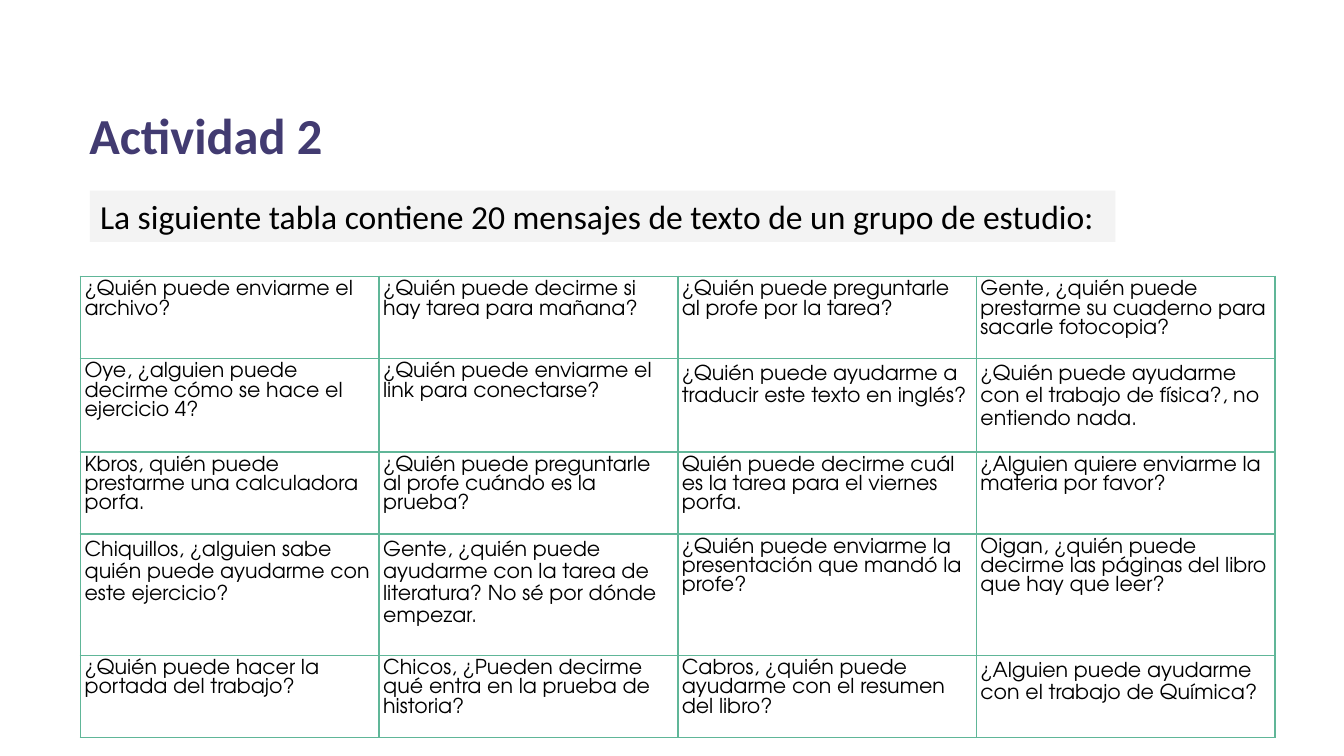
"""Build the slide "Actividad 2" with its table of study-group messages."""
from dataclasses import dataclass

import lxml.etree
import pptx
import pptx.dml.color
import pptx.enum.shapes
import pptx.enum.text
import pptx.oxml.ns
import pptx.util

Pt = pptx.util.Pt
COLORS = {"title": "423B71", "text": "000000", "band": "F3F3F3", "border": "60B698"}
LOOSE = 1.15
COLUMN_WIDTH = 160
ROW_HEIGHTS = [44, 49.8, 44, 64.8, 44]


@dataclass
class Message:
    text: str
    line_spacing: float = 1.0


MESSAGES = [
    [
        Message("¿Quién puede enviarme el archivo?"),
        Message("¿Quién puede decirme si hay tarea para mañana?"),
        Message("¿Quién puede preguntarle al profe por la tarea?"),
        Message("Gente, ¿quién puede prestarme su cuaderno para sacarle fotocopia?"),
    ],
    [
        Message("Oye, ¿alguien puede decirme cómo se hace el ejercicio 4?"),
        Message("¿Quién puede enviarme el link para conectarse?"),
        Message("¿Quién puede ayudarme a traducir este texto en inglés?", LOOSE),
        Message("¿Quién puede ayudarme con el trabajo de física?, no entiendo nada.", LOOSE),
    ],
    [
        Message("Kbros, quién puede prestarme una calculadora porfa."),
        Message("¿Quién puede preguntarle al profe cuándo es la prueba?"),
        Message("Quién puede decirme cuál es la tarea para el viernes porfa."),
        Message("¿Alguien quiere enviarme la materia por favor?"),
    ],
    [
        Message("Chiquillos, ¿alguien sabe quién puede ayudarme con este ejercicio?", LOOSE),
        Message("Gente, ¿quién puede ayudarme con la tarea de literatura? "
                "No sé por dónde empezar.", LOOSE),
        Message("¿Quién puede enviarme la presentación que mandó la profe?"),
        Message("Oigan, ¿quién puede decirme las páginas del libro que hay que leer?"),
    ],
    [
        Message("¿Quién puede hacer la portada del trabajo?"),
        Message("Chicos, ¿Pueden decirme qué entra en la prueba de historia?"),
        Message("Cabros, ¿quién puede ayudarme con el resumen del libro?"),
        Message("¿Alguien puede ayudarme con el trabajo de Química?", LOOSE),
    ],
]


def color(name: str) -> pptx.dml.color.RGBColor:
    """Return a named colour of the slide."""
    return pptx.dml.color.RGBColor.from_string(COLORS[name])


def write(frame, text: str, *, size: float, font: str = "Calibri", fill: str = "text",
          bold: bool = False, align=pptx.enum.text.PP_ALIGN.LEFT,
          line_spacing: float = 1.0) -> None:
    """Write one formatted paragraph into a text frame."""
    frame.word_wrap = True
    para = frame.paragraphs[0]
    para.alignment = align
    para.line_spacing = line_spacing
    span = para.add_run()
    span.text = text
    span.font.name = font
    span.font.size = Pt(size)
    span.font.bold = bold
    span.font.color.rgb = color(fill)


def set_margins(target, horizontal: float, vertical: float) -> None:
    """Set the inner margins of a text frame or a table cell."""
    target.margin_left = target.margin_right = Pt(horizontal)
    target.margin_top = target.margin_bottom = Pt(vertical)


def add_borders(cell) -> None:
    """Outline all four sides of a cell."""
    properties = cell._tc.get_or_add_tcPr()
    qn = pptx.oxml.ns.qn
    for index, side in enumerate(("a:lnL", "a:lnR", "a:lnT", "a:lnB")):
        line = lxml.etree.Element(qn(side), w=str(Pt(1)))
        fill = lxml.etree.SubElement(line, qn("a:solidFill"))
        lxml.etree.SubElement(fill, qn("a:srgbClr"), val=COLORS["border"])
        properties.insert(index, line)


def add_title(page) -> None:
    """Add the slide title."""
    box = page.shapes.add_textbox(Pt(42.5), Pt(53.3), Pt(170.6), Pt(38.2))
    set_margins(box.text_frame, 5.4, 2.7)
    write(box.text_frame, "Actividad 2", size=27, fill="title", bold=True)


def add_band(page) -> None:
    """Add the grey band that introduces the table."""
    band = page.shapes.add_shape(pptx.enum.shapes.MSO_SHAPE.RECTANGLE,
                                 Pt(48.2), Pt(102.2), Pt(549.4), Pt(27.4))
    band.shadow.inherit = False
    band.fill.solid()
    band.fill.fore_color.rgb = color("band")
    band.line.fill.background()
    set_margins(band.text_frame, 5.4, 2.7)
    band.text_frame.vertical_anchor = pptx.enum.text.MSO_ANCHOR.TOP
    write(band.text_frame,
          "La siguiente tabla contiene 20 mensajes de texto de un grupo de estudio:",
          size=18, align=pptx.enum.text.PP_ALIGN.JUSTIFY)


def add_messages(page) -> None:
    """Add the table of messages."""
    table = page.shapes.add_table(len(MESSAGES), len(MESSAGES[0]), Pt(43.1), Pt(148.1),
                                  Pt(COLUMN_WIDTH * len(MESSAGES[0])),
                                  Pt(sum(ROW_HEIGHTS))).table
    table.first_row = table.horz_banding = False
    for column in table.columns:
        column.width = Pt(COLUMN_WIDTH)
    for row, height, messages in zip(table.rows, ROW_HEIGHTS, MESSAGES):
        row.height = Pt(height)
        for cell, message in zip(row.cells, messages):
            cell.fill.background()
            set_margins(cell, 2.2, 2.2)
            write(cell.text_frame, message.text, size=11, font="TeX Gyre Adventor",
                  line_spacing=message.line_spacing)
            add_borders(cell)


def main() -> None:
    """Build and save the deck."""
    deck = pptx.Presentation()
    deck.slide_width, deck.slide_height = Pt(720), Pt(405)
    page = deck.slides.add_slide(deck.slide_layouts[6])
    add_title(page)
    add_band(page)
    add_messages(page)
    deck.save("out.pptx")


if __name__ == "__main__":
    main()
